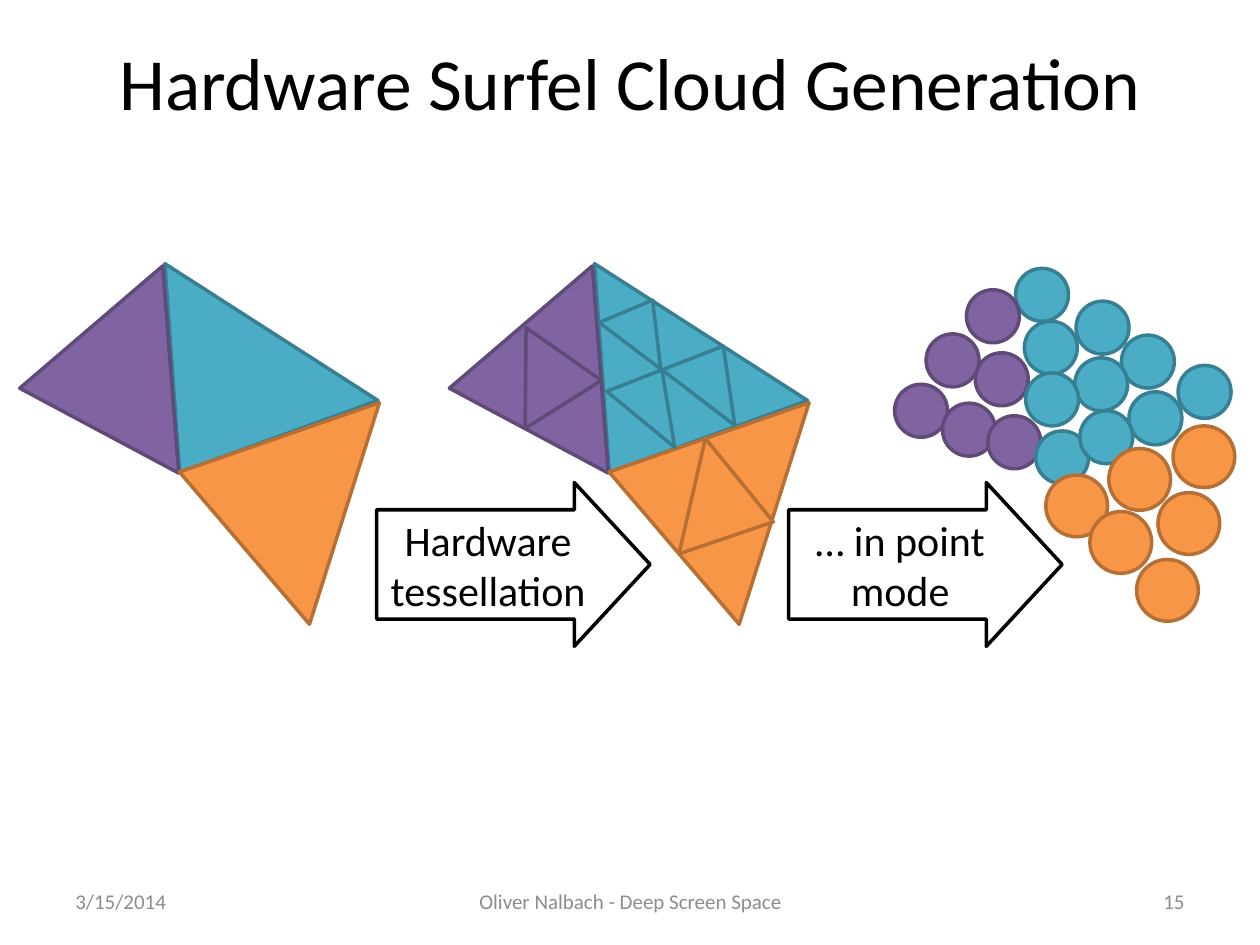
"""Build the slide on hardware surfel cloud generation."""
from pptx import Presentation
from pptx.dml.color import RGBColor
from pptx.enum.shapes import MSO_SHAPE
from pptx.enum.text import MSO_ANCHOR, PP_ALIGN
from pptx.util import Inches, Pt

BLACK = RGBColor(0x00, 0x00, 0x00)
WHITE = RGBColor(0xFF, 0xFF, 0xFF)
GRAY = RGBColor(0x8C, 0x8C, 0x8C)
TEAL = (RGBColor(0x4B, 0xAC, 0xC6), RGBColor(0x37, 0x7F, 0x92))
PURPLE = (RGBColor(0x80, 0x64, 0xA2), RGBColor(0x5F, 0x4A, 0x78))
ORANGE = (RGBColor(0xF7, 0x96, 0x46), RGBColor(0xB7, 0x6F, 0x34))
OUTLINED = (WHITE, BLACK)

MESH_SHIFT = 3.41
MESH = [
    ((0.79, 2.53, 2.01, 1.33), 212.7, 0.506, TEAL),
    ((0.40, 2.11, 1.43, 1.39), 28.1, 0.38, PURPLE),
    ((1.62, 3.43, 1.68, 1.48), 160.9, 0.655, ORANGE),
]
SUBDIVISION = [
    ((3.92, 2.75, 0.73, 0.66), 215, 0.38, PURPLE),
    ((4.91, 3.00, 0.47, 0.61), 158.7, 0.275, TEAL),
    ((4.84, 2.45, 0.46, 0.53), 157.2, 0.333, TEAL),
    ((5.24, 3.49, 0.79, 0.80), 341.3, 0.623, ORANGE),
    ((5.35, 2.82, 0.52, 0.62), 158.7, 0.275, TEAL),
]
SURFELS = [
    (PURPLE, 0.42, [(7.10, 3.05)]),
    (TEAL, 0.42, [(8.06, 2.13)]),
    (PURPLE, 0.42, [(7.67, 2.30), (7.48, 3.20), (7.74, 2.80), (7.84, 3.30),
                    (7.35, 2.65)]),
    (TEAL, 0.42, [(8.54, 2.39), (8.90, 2.66), (9.35, 2.90), (8.13, 2.55),
                  (8.53, 2.84), (8.14, 2.96), (8.22, 3.42), (8.96, 3.11),
                  (8.57, 3.26)]),
    (ORANGE, 0.49, [(8.30, 3.77), (8.65, 4.06), (9.02, 4.44), (8.80, 3.56),
                    (9.31, 3.38), (9.19, 3.91)]),
]
ARROWS = [(2.99, "Hardware tessellation"), (6.26, "… in point mode")]
FOOTER = [
    (0.5, 2.33, "3/15/2014", PP_ALIGN.LEFT),
    (3.42, 3.17, "Oliver Nalbach - Deep Screen Space", PP_ALIGN.CENTER),
    (7.17, 2.33, "15", PP_ALIGN.RIGHT),
]


def apply_format(target, values):
    """Set each named attribute of the target."""
    for name, value in values.items():
        setattr(target, name, value)


def write_text(box, text, size, color, align=PP_ALIGN.CENTER):
    """Write one formatted paragraph, centred vertically in the box."""
    apply_format(box.text_frame,
                 {"word_wrap": True, "vertical_anchor": MSO_ANCHOR.MIDDLE})
    para = box.text_frame.paragraphs[0]
    para.alignment = align
    span = para.add_run()
    span.text = text
    apply_format(span.font, {"name": "Calibri", "size": Pt(size)})
    span.font.color.rgb = color


def add_figure(shapes, kind, place, colors, rotation=0, adjustments=()):
    """Add a filled and outlined preset shape."""
    figure = shapes.add_shape(kind, *map(Inches, place))
    fill, line = colors
    figure.shadow.inherit = False
    figure.fill.solid()
    figure.fill.fore_color.rgb = fill
    figure.line.color.rgb = line
    figure.line.width = Pt(2)
    figure.rotation = rotation
    for index, value in enumerate(adjustments):
        figure.adjustments[index] = value
    return figure


def add_triangles(group, triangles, shift=0):
    """Add rotated triangles, moved right by the shift."""
    for (left, *rest), rotation, apex, colors in triangles:
        add_figure(group.shapes, MSO_SHAPE.ISOSCELES_TRIANGLE,
                   (left + shift, *rest), colors, rotation, [apex])


def add_surfels(group):
    """Add the cloud of round surfels."""
    for colors, size, corners in SURFELS:
        for left, top in corners:
            add_figure(group.shapes, MSO_SHAPE.OVAL,
                       (left, top, size, size), colors)


def add_arrow(page, left, text):
    """Add a labelled step arrow."""
    arrow = add_figure(page.shapes, MSO_SHAPE.RIGHT_ARROW,
                       (left, 3.83, 2.17, 1.3), OUTLINED,
                       adjustments=[0.667, 0.463])
    write_text(arrow, text, 24, BLACK)


def add_title(page, text):
    """Place and fill the title placeholder."""
    title = page.shapes.title
    apply_format(title, {"left": Inches(0.5), "top": Inches(0.21),
                         "width": Inches(9), "height": Inches(0.87)})
    write_text(title, text, 42, BLACK)


def add_footer(page, left, width, text, align):
    """Add one footer text."""
    box = page.shapes.add_textbox(*map(Inches, (left, 6.95, width, 0.4)))
    write_text(box, text, 12, GRAY, align)


def main():
    """Build and save the deck."""
    deck = Presentation()
    apply_format(deck, {"slide_width": Inches(10), "slide_height": Inches(7.5)})
    page = deck.slides.add_slide(deck.slide_layouts[5])
    tessellated = page.shapes.add_group_shape()
    add_triangles(tessellated, MESH, MESH_SHIFT)
    add_triangles(tessellated, SUBDIVISION)
    add_title(page, "Hardware Surfel Cloud Generation")
    for entry in FOOTER:
        add_footer(page, *entry)
    add_surfels(page.shapes.add_group_shape())
    add_triangles(page.shapes.add_group_shape(), MESH)
    for left, text in ARROWS:
        add_arrow(page, left, text)
    deck.save("out.pptx")


if __name__ == "__main__":
    main()
